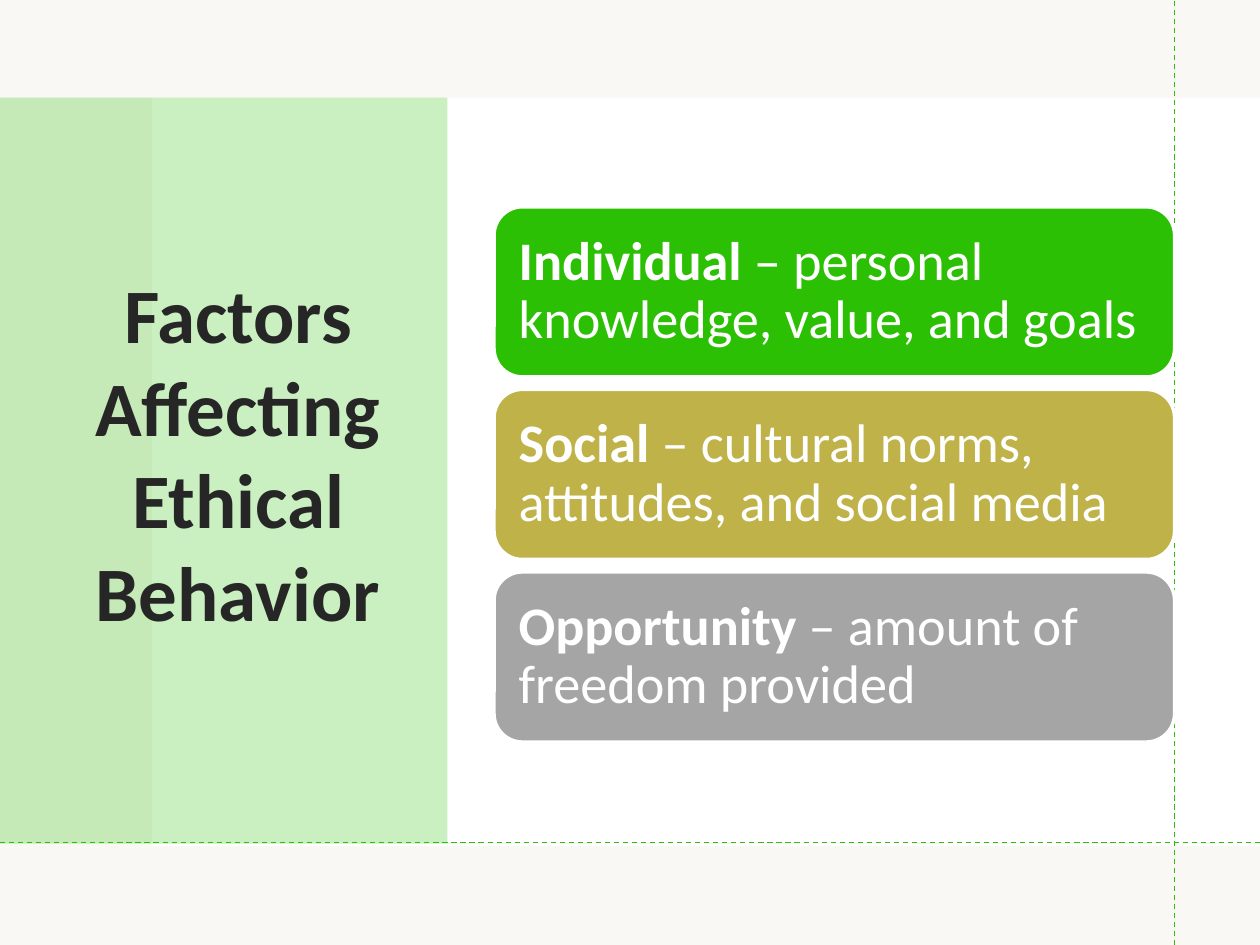
from dataclasses import dataclass

from lxml.etree import SubElement
from pptx import Presentation
from pptx.dml.color import RGBColor as Rgb
from pptx.enum.dml import MSO_LINE as Dash
from pptx.enum.shapes import MSO_CONNECTOR as Conn, MSO_SHAPE as Kind
from pptx.enum.text import MSO_ANCHOR as Anchor, MSO_AUTO_SIZE as Fit, PP_ALIGN as Align
from pptx.oxml.ns import qn
from pptx.util import Cm, Pt

HUES = {
    "white": "FFFFFF",
    "sand": "EEECE1",
    "green": "2CC004",
    "gold": "BFB248",
    "gray": "A5A5A5",
    "ink": "262626",
}
WIDE, HIGH = 25.4, 19.05
CARD_X, CARD_Y, CARD_W, CARD_H, STEP = 9.96, 4.17, 13.72, 3.43, 3.68


@dataclass
class Panel:
    left: float
    top: float
    width: float
    height: float
    hue: str
    alpha: int = 100


@dataclass
class Card:
    head: str
    rest: str
    hue: str


@dataclass
class Guide:
    x1: float
    y1: float
    x2: float
    y2: float


PANELS = [
    Panel(0, 0, WIDE, HIGH, "white"),
    Panel(0, 0, WIDE, HIGH, "sand", 35),
    Panel(3.07, 1.97, 22.33, 15.09, "white"),
    Panel(0, 1.97, 9.02, 15.04, "green", 25),
]
GUIDES = [Guide(23.67, HIGH, 23.67, 0), Guide(0, 16.99, WIDE, 16.99)]
CARDS = [
    Card("Individual", " – personal knowledge, value, and goals", "green"),
    Card("Social", " – cultural norms, attitudes, and social media", "gold"),
    Card("Opportunity", " – amount of freedom provided", "gray"),
]


def tint(hue: str) -> Rgb:
    return Rgb.from_string(HUES[hue])


def apply(item, form: dict) -> None:
    for name, value in form.items():
        setattr(item, name, value)


def add_run(para, text: str, size: int, hue: str, bold: bool) -> None:
    run = para.add_run()
    run.text = text
    apply(run.font, {"name": "Calibri", "size": Pt(size), "bold": bold})
    run.font.color.rgb = tint(hue)


def add_box(slide, kind: Kind, left: float, top: float, width: float, height: float, hue: str):
    box = slide.shapes.add_shape(kind, Cm(left), Cm(top), Cm(width), Cm(height))
    box.shadow.inherit = False
    box.fill.solid()
    box.fill.fore_color.rgb = tint(hue)
    return box


def draw_panel(slide, panel: Panel) -> None:
    box = add_box(slide, Kind.RECTANGLE, panel.left, panel.top,
                  panel.width, panel.height, panel.hue)
    box.line.fill.background()
    if panel.alpha < 100:
        color = box.element.spPr.find(qn("a:solidFill"))[0]
        SubElement(color, qn("a:alpha"), val=str(panel.alpha * 1000))


def draw_title(slide, text: str) -> None:
    title = slide.shapes.title
    apply(title, {"left": Cm(1.04), "top": Cm(1.88), "width": Cm(7.52), "height": Cm(14.45)})
    frame = title.text_frame
    apply(frame, {"word_wrap": True, "auto_size": Fit.NONE, "vertical_anchor": Anchor.MIDDLE})
    para = frame.paragraphs[0]
    para.alignment = Align.CENTER
    add_run(para, text, 44, "ink", True)
    slide.shapes.element.append(title.element)


def draw_guide(slide, guide: Guide) -> None:
    line = slide.shapes.add_connector(Conn.STRAIGHT, Cm(guide.x1), Cm(guide.y1),
                                      Cm(guide.x2), Cm(guide.y2))
    apply(line.line, {"width": Pt(0.75), "dash_style": Dash.DASH})
    line.line.color.rgb = tint("green")
    SubElement(line.element.spPr, qn("a:effectLst"))


def draw_card(slide, card: Card, top: float) -> None:
    box = add_box(slide, Kind.ROUNDED_RECTANGLE, CARD_X, top, CARD_W, CARD_H, card.hue)
    box.line.width = Pt(2)
    box.line.color.rgb = tint("white")
    frame = box.text_frame
    pad = Cm(0.33)
    apply(frame, {
        "word_wrap": True, "vertical_anchor": Anchor.MIDDLE,
        "margin_left": pad, "margin_right": pad, "margin_top": pad, "margin_bottom": pad,
    })
    para = frame.paragraphs[0]
    apply(para, {"alignment": Align.LEFT, "line_spacing": 0.9})
    add_run(para, card.head, 31, "white", True)
    add_run(para, card.rest, 31, "white", False)


def main() -> None:
    deck = Presentation()
    apply(deck, {"slide_width": Cm(WIDE), "slide_height": Cm(HIGH)})
    slide = deck.slides.add_slide(deck.slide_layouts[5])
    for panel in PANELS:
        draw_panel(slide, panel)
    draw_title(slide, "Factors Affecting Ethical Behavior")
    for guide in GUIDES:
        draw_guide(slide, guide)
    for row, card in enumerate(CARDS):
        draw_card(slide, card, CARD_Y + row * STEP)
    deck.save("out.pptx")


if __name__ == "__main__":
    main()
